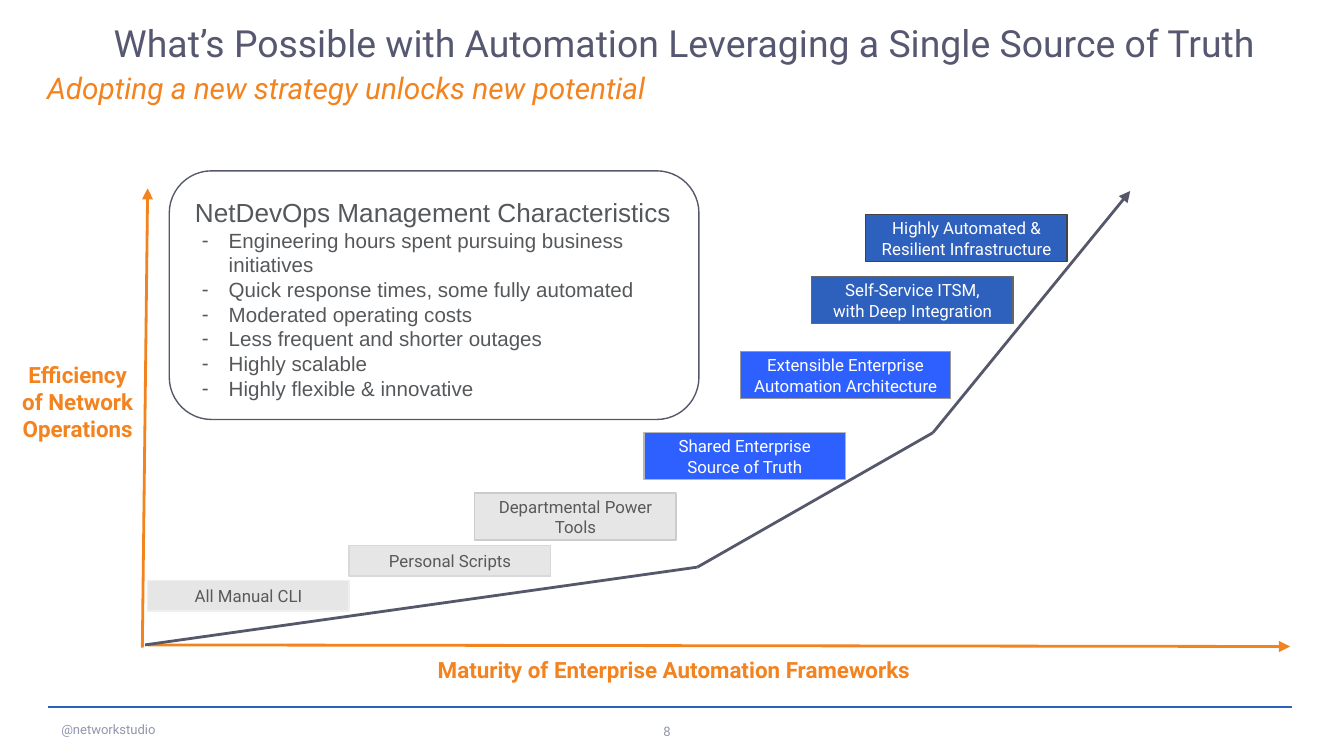
from lxml import etree
from pptx import Presentation
from pptx.dml.color import RGBColor
from pptx.enum.shapes import MSO_CONNECTOR, MSO_SHAPE
from pptx.enum.text import MSO_ANCHOR, PP_ALIGN
from pptx.oxml.ns import qn
from pptx.util import Cm, Pt

ORANGE, SLATE, INK = "F3831E", "55586A", "55585B"
BLUE, BRIGHT, PALE, MUTED = "2E60BD", "2E60FF", "E7E6E6", "9296AE"
GREY_TEXT, WHITE = "595959", "FFFFFF"


def colour(value):
    return RGBColor.from_string(value)


class SlideWriter:
    font = "Roboto"

    def __init__(self, slide):
        self.slide = slide

    def style(self, paragraph, size, ink, font=None, bold=False, italic=False,
              align=PP_ALIGN.LEFT, spacing=None):
        paragraph.alignment = align
        if spacing:
            paragraph.line_spacing = spacing
        face = paragraph.font
        face.name = font or self.font
        face.size = Pt(size)
        face.bold = bold
        face.italic = italic
        face.color.rgb = colour(ink)

    def frame(self, shape, horizontal, vertical, anchor):
        frame = shape.text_frame
        frame.word_wrap = True
        frame.vertical_anchor = anchor
        frame.margin_left = frame.margin_right = Cm(horizontal)
        frame.margin_top = frame.margin_bottom = Cm(vertical)
        return frame

    def text(self, words, box, size, ink, inset=(0.25, 0.13),
             anchor=MSO_ANCHOR.TOP, **look):
        shape = self.slide.shapes.add_textbox(*map(Cm, box))
        frame = self.frame(shape, *inset, anchor)
        frame.text = words
        self.style(frame.paragraphs[0], size, ink, **look)

    def line(self, start, end, ink, width=1.5, arrow=False):
        connector = self.slide.shapes.add_connector(
            MSO_CONNECTOR.STRAIGHT, *map(Cm, start + end))
        connector.line.color.rgb = colour(ink)
        connector.line.width = Pt(width)
        if arrow:
            outline = connector.line._get_or_add_ln()
            etree.SubElement(outline, qn("a:tailEnd"), type="triangle")
        etree.SubElement(connector._element.spPr, qn("a:effectLst"))

    def box(self, kind, box, edge, fill=None):
        shape = self.slide.shapes.add_shape(kind, *map(Cm, box))
        shape.shadow.inherit = False
        if fill:
            shape.fill.solid()
            shape.fill.fore_color.rgb = colour(fill)
        else:
            shape.fill.background()
        shape.line.color.rgb = colour(edge)
        shape.line.width = Pt(0.75)
        return shape

    def stage(self, words, box, fill, edge, ink):
        shape = self.box(MSO_SHAPE.RECTANGLE, box, edge, fill)
        frame = self.frame(shape, 0.18, 0.18, MSO_ANCHOR.MIDDLE)
        frame.text = words
        for paragraph in frame.paragraphs:
            self.style(paragraph, 9, ink, align=PP_ALIGN.CENTER)

    def bullet(self, paragraph, ink):
        properties = paragraph._p.get_or_add_pPr()
        properties.set("marL", str(Cm(0.64)))
        properties.set("indent", str(Cm(-0.51)))
        tint = etree.SubElement(properties, qn("a:buClr"))
        etree.SubElement(tint, qn("a:srgbClr"), val=ink)
        etree.SubElement(properties, qn("a:buFont"), typeface="Arial")
        etree.SubElement(properties, qn("a:buChar"), char="-")

    def card(self, heading, points, box):
        shape = self.box(MSO_SHAPE.ROUNDED_RECTANGLE, box, SLATE)
        shape.adjustments[0] = 0.17
        frame = self.frame(shape, 0.25, 0.25, MSO_ANCHOR.TOP)
        frame.text = heading
        self.style(frame.paragraphs[0], 14, INK, font="Arial")
        for point in points:
            paragraph = frame.add_paragraph()
            paragraph.text = point
            self.bullet(paragraph, INK)
            self.style(paragraph, 11, INK, font="Arial")


def main():
    deck = Presentation()
    deck.slide_width, deck.slide_height = Cm(25.4), Cm(14.29)
    writer = SlideWriter(deck.slides.add_slide(deck.slide_layouts[6]))

    writer.line((0.91, 13.36), (24.41, 13.36), BLUE, width=1)
    writer.text("@networkstudio", (0.91, 13.51, 3.96, 0.56), 7, MUTED)
    writer.text("8", (12.29, 13.54, 0.81, 0.56), 7, MUTED)
    writer.text("What’s Possible with Automation Leveraging a Single Source of Truth",
                (1.9, 0.36, 22.5, 0.99), 20, "555870",
                anchor=MSO_ANCHOR.MIDDLE, spacing=0.9)
    writer.text("Adopting a new strategy unlocks new potential",
                (0.64, 1.27, 23.5, 0.71), 16, ORANGE, italic=True, spacing=0.9)

    writer.line((2.79, 12.19), (24.38, 12.22), ORANGE, arrow=True)
    writer.line((2.69, 12.24), (2.79, 3.56), ORANGE, arrow=True)
    axis_labels = [
        ("Maturity of Enterprise Automation Frameworks", (7.42, 12.22, 10.64, 1.57)),
        ("Efficiency of Network Operations", (0.2, 6.65, 2.54, 1.57)),
    ]
    for label, place in axis_labels:
        writer.text(label, place, 12, ORANGE, inset=(0.18, 0.18), bold=True,
                    align=PP_ALIGN.CENTER)

    curve = [(2.74, 12.19), (13.18, 10.72), (17.63, 8.18), (21.36, 3.61)]
    for start, end in zip(curve, curve[1:]):
        writer.line(start, end, SLATE, arrow=end == curve[-1])

    stages = [
        ("All Manual CLI", (2.79, 10.97, 3.81, 0.58), PALE, "EFEFEF", GREY_TEXT),
        ("Personal Scripts", (6.6, 10.31, 3.81, 0.58), PALE, "D9D9D9", GREY_TEXT),
        ("Departmental Power Tools", (8.97, 9.32, 3.81, 0.89), PALE, "CCCCCC", GREY_TEXT),
        ("Shared Enterprise\nSource of Truth", (12.17, 8.18, 3.81, 0.89),
         BRIGHT, "B7B7B7", WHITE),
        ("Extensible Enterprise Automation Architecture", (14, 6.65, 3.96, 0.89),
         BRIGHT, "999999", WHITE),
        ("Self-Service ITSM,\nwith Deep Integration", (15.34, 5.23, 3.81, 0.89),
         BLUE, "666666", WHITE),
        ("Highly Automated &\nResilient Infrastructure", (16.36, 4.06, 3.81, 0.89),
         BLUE, "434343", WHITE),
    ]
    for stage in stages:
        writer.stage(*stage)

    writer.card("NetDevOps Management Characteristics", [
        "Engineering hours spent pursuing business initiatives",
        "Quick response times, some fully automated",
        "Moderated operating costs",
        "Less frequent and shorter outages",
        "Highly scalable",
        "Highly flexible & innovative",
    ], (3.2, 3.23, 10.01, 4.7))

    deck.save("out.pptx")


if __name__ == "__main__":
    main()
